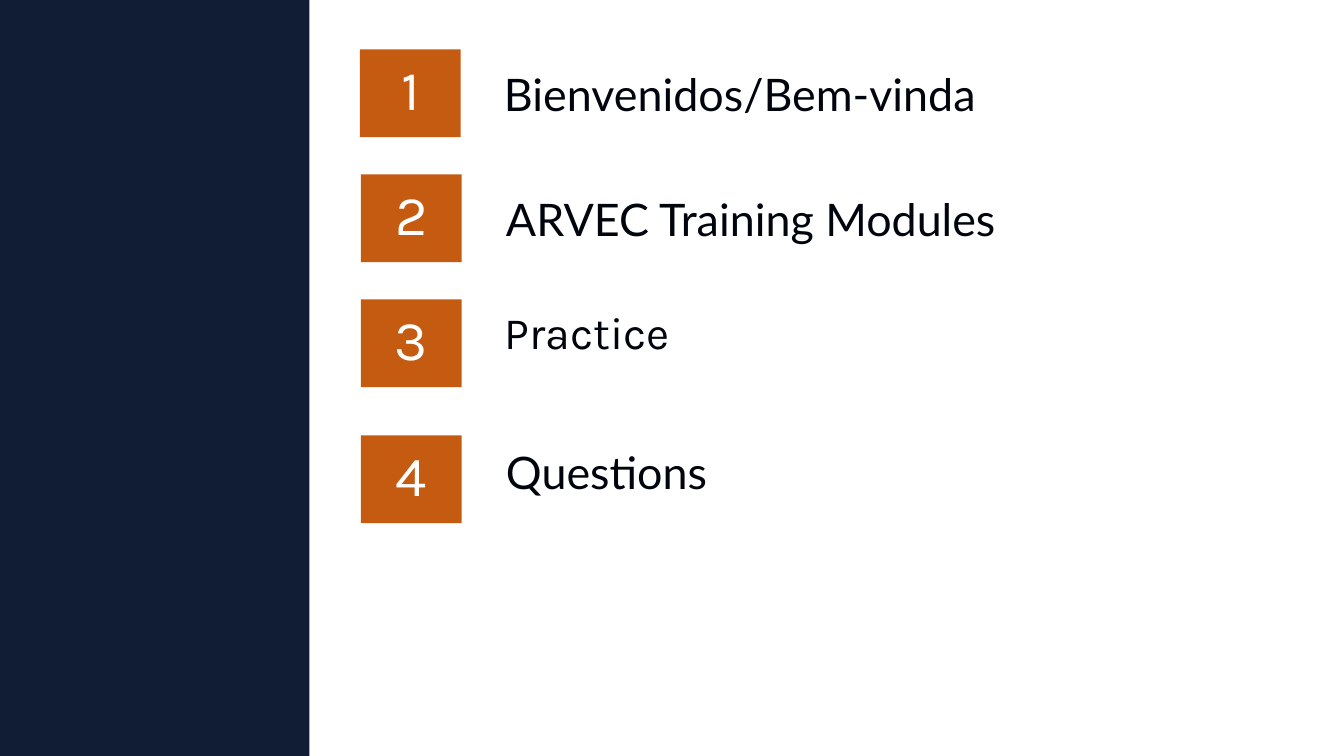
"""Agenda slide: a dark side panel and four numbered topics."""
from pptx import Presentation
from pptx import util as u
from pptx.dml.color import RGBColor
from pptx.enum import shapes, text

NAVY = RGBColor(0x10, 0x1D, 0x35)
ORANGE = RGBColor(0xC5, 0x5A, 0x11)
WHITE = RGBColor(0xFF, 0xFF, 0xFF)
INK = RGBColor(0x00, 0x04, 0x0C)
MIDDLE = text.MSO_ANCHOR.MIDDLE
TOP = text.MSO_ANCHOR.TOP


def write(box, words, *, font, size, color, align=text.PP_ALIGN.LEFT, anchor=TOP):
    frame = box.text_frame
    frame.word_wrap = True
    frame.vertical_anchor = anchor
    para = frame.paragraphs[0]
    para.alignment = align
    span = para.add_run()
    span.text = words
    span.font.name = font
    span.font.size = u.Pt(size)
    span.font.color.rgb = color


def add_block(page, left, top, width, height, color):
    block = page.shapes.add_shape(
        shapes.MSO_SHAPE.RECTANGLE, *map(u.Inches, (left, top, width, height)))
    block.shadow.inherit = False
    block.fill.solid()
    block.fill.fore_color.rgb = color
    block.line.fill.background()
    return block


deck = Presentation()
deck.slide_width = u.Inches(13.33)
deck.slide_height = u.Inches(7.5)
page = deck.slides.add_slide(deck.slide_layouts[6])

add_block(page, 0, 0, 3.07, 7.5, NAVY)

topics = [
    ("Bienvenidos/Bem-vinda", "Lato", MIDDLE, (3.57, 0.49), (4.9, 0.65, 8.04, 0.56)),
    ("ARVEC Training Modules", "Lato", MIDDLE, (3.58, 1.73), (4.92, 1.89, 7.94, 0.56)),
    ("Practice", "Karla", TOP, (3.58, 2.97), (4.91, 2.97, 8.04, 0.64)),
    ("Questions", "Lato", MIDDLE, (3.58, 4.32), (4.92, 4.32, 7.71, 0.72)),
]
for number, (topic, font, anchor, corner, area) in enumerate(topics, start=1):
    badge = add_block(page, *corner, 1, 0.87, ORANGE)
    write(badge, str(number), font="Karla", size=40, color=WHITE,
          align=text.PP_ALIGN.CENTER)
    label = page.shapes.add_textbox(*map(u.Inches, area))
    write(label, topic, font=font, size=32, color=INK, anchor=anchor)

deck.save("out.pptx")
